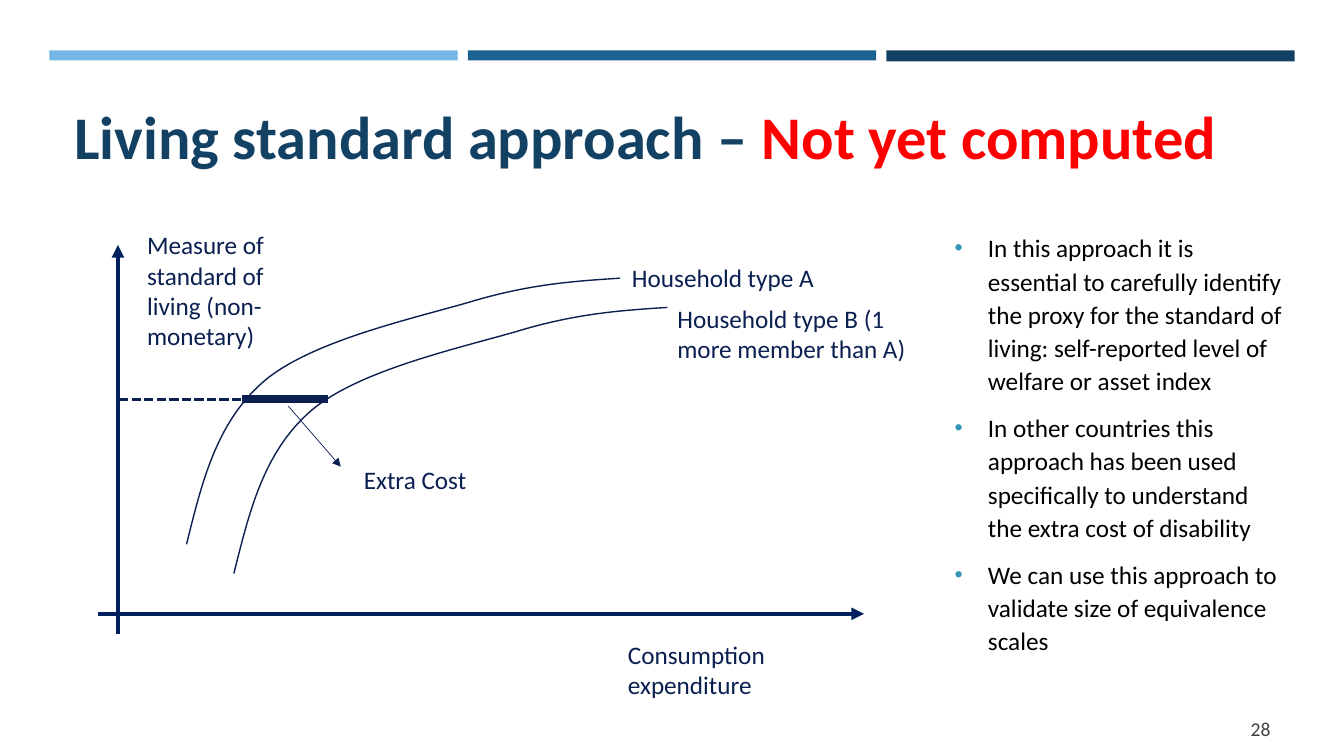
from dataclasses import dataclass
from typing import NamedTuple, Optional

from lxml.etree import SubElement
from pptx import Presentation
from pptx.dml.color import RGBColor
from pptx.enum.dml import MSO_LINE
from pptx.enum.shapes import MSO_CONNECTOR, MSO_SHAPE
from pptx.enum.text import MSO_ANCHOR, PP_ALIGN
from pptx.oxml.ns import qn
from pptx.util import Emu, Pt

PX = 9144


@dataclass(frozen=True)
class Theme:
    """Colours, font and type sizes of the slide."""
    font: str = "Calibri"
    sky: str = "75B6E5"
    blue: str = "1D6294"
    navy: str = "134163"
    axis: str = "002060"
    ink: str = "0B1F51"
    alert: str = "FF0000"
    bullet: str = "3494BA"
    body: str = "000000"
    grey: str = "404040"
    title_size: float = 43.2
    text_size: float = 18
    number_size: float = 14


THEME = Theme()


class Point(NamedTuple):
    """A place on the slide in px."""
    x: int
    y: int


class Frame(NamedTuple):
    """A rectangle in px."""
    left: int
    top: int
    width: int
    height: int


class Span(NamedTuple):
    """A piece of text in one colour."""
    text: str
    color: str


class Label(NamedTuple):
    """A diagram caption and its frame."""
    text: str
    frame: Frame


class Stroke(NamedTuple):
    """A straight line of the diagram."""
    start: Point
    end: Point
    color: str
    weight: float
    dash: Optional[MSO_LINE] = None
    arrow: bool = False


BARS = ((THEME.sky, 10), (THEME.blue, 10), (THEME.navy, 11))
TITLE = (Span("Living standard approach – ", THEME.navy),
         Span("Not yet computed", THEME.alert))
BULLETS = (
    "In this approach it is essential to carefully identify the proxy for the "
    "standard of living: self-reported level of welfare or asset index",
    "In other countries this approach has been used specifically to understand "
    "the extra cost of disability",
    "We can use this approach to validate size of equivalence scales",
)
LABELS = (
    Label("Measure of standard of living (non-monetary)", Frame(136, 223, 169, 131)),
    Label("Consumption expenditure", Frame(613, 629, 260, 71)),
    Label("Household type B (1 more member than A)", Frame(662, 296, 264, 71)),
    Label("Household type A", Frame(617, 255, 273, 40)),
    Label("Extra Cost", Frame(351, 456, 208, 40)),
)
STROKES = (
    Stroke(Point(117, 629), Point(117, 243), THEME.axis, 3, arrow=True),
    Stroke(Point(97, 609), Point(857, 609), THEME.axis, 3, arrow=True),
    Stroke(Point(118, 396), Point(325, 396), THEME.ink, 2.25, dash=MSO_LINE.SQUARE_DOT),
    Stroke(Point(240, 396), Point(325, 396), THEME.ink, 6),
    Stroke(Point(286, 403), Point(338, 463), THEME.ink, 0.5, arrow=True),
)
HOUSEHOLD_A = tuple(Point(*pair) for pair in (
    (185, 540), (200, 480), (214, 420), (261, 379), (307, 339), (406, 317),
    (465, 300), (524, 282), (569, 279), (615, 276)))
HOUSEHOLD_B = tuple(Point(point.x + 47, point.y + 29) for point in HOUSEHOLD_A)


def rgb(color: str) -> RGBColor:
    """Turn a hex string into a colour."""
    return RGBColor.from_string(color)


def emu(lengths) -> list[Emu]:
    """Turn px lengths into EMU."""
    return [Emu(length * PX) for length in lengths]


def add_bar(page, frame: Frame, color: str) -> None:
    """Draw a plain filled rectangle."""
    bar = page.shapes.add_shape(MSO_SHAPE.RECTANGLE, *emu(frame))
    bar.shadow.inherit = False
    bar.fill.solid()
    bar.fill.fore_color.rgb = rgb(color)
    bar.line.fill.background()


def set_bullet(para) -> None:
    """Give a paragraph a coloured hanging bullet and its spacing."""
    para.line_spacing = 1.1
    para.space_before = Pt(3.6)
    para.space_after = Pt(6)
    properties = para._p.get_or_add_pPr()
    properties.set("marL", str(33 * PX))
    properties.set("indent", str(-33 * PX))
    tint = SubElement(properties, qn("a:buClr"))
    SubElement(tint, qn("a:srgbClr"), val=THEME.bullet)
    SubElement(properties, qn("a:buSzPct"), val="92000")
    SubElement(properties, qn("a:buFont"), typeface="Arial")
    SubElement(properties, qn("a:buChar"), char="•")


def add_text(page, frame: Frame, paras, *, size: float = THEME.text_size,
             bold: bool = False, align=PP_ALIGN.LEFT, anchor=MSO_ANCHOR.TOP,
             bullets: bool = False) -> None:
    """Write paragraphs, each a sequence of spans, in a wrapping text box."""
    box = page.shapes.add_textbox(*emu(frame)).text_frame
    box.word_wrap = True
    box.vertical_anchor = anchor
    for index, spans in enumerate(paras):
        para = box.add_paragraph() if index else box.paragraphs[0]
        para.alignment = align
        if bullets:
            set_bullet(para)
        for span in spans:
            run = para.add_run()
            run.text = span.text
            run.font.name = THEME.font
            run.font.size = Pt(size)
            run.font.bold = bold
            run.font.color.rgb = rgb(span.color)


def add_stroke(page, stroke: Stroke) -> None:
    """Draw a straight line, dashed or with an arrowhead if asked."""
    line = page.shapes.add_connector(
        MSO_CONNECTOR.STRAIGHT, *emu(stroke.start + stroke.end))
    line.line.color.rgb = rgb(stroke.color)
    line.line.width = Pt(stroke.weight)
    if stroke.dash:
        line.line.dash_style = stroke.dash
    if stroke.arrow:
        SubElement(line.get_or_add_ln(), qn("a:tailEnd"), type="triangle")
    SubElement(line._element.spPr, qn("a:effectLst"))


def add_curve(page, knots: tuple[Point, ...]) -> None:
    """Draw an open curve whose knots chain cubic segments."""
    builder = page.shapes.build_freeform(*knots[0], scale=PX)
    builder.add_line_segments(knots[1:], close=False)
    curve = builder.convert_to_shape()
    outline = next(curve._element.iter(qn("a:lnTo"))).getparent()
    sides = outline.findall(qn("a:lnTo"))
    for first in range(0, len(sides), 3):
        cubic = SubElement(outline, qn("a:cubicBezTo"))
        for side in sides[first:first + 3]:
            cubic.append(side[0])
            outline.remove(side)
    curve.shadow.inherit = False
    curve.fill.background()
    curve.line.color.rgb = rgb(THEME.ink)
    curve.line.width = Pt(1)


def main() -> None:
    """Build the slide and save it."""
    deck = Presentation()
    deck.slide_width, deck.slide_height = emu((1333, 750))
    page = deck.slides.add_slide(deck.slide_layouts[6])
    for index, (color, height) in enumerate(BARS):
        add_bar(page, Frame(49 + 415 * index, 50, 405, height), color)
    add_text(page, Frame(64, 80, 1206, 108), [TITLE], size=THEME.title_size,
             bold=True, anchor=MSO_ANCHOR.MIDDLE)
    add_text(page, Frame(937, 223, 348, 463),
             [[Span(text, THEME.body)] for text in BULLETS], bullets=True)
    for knots in (HOUSEHOLD_A, HOUSEHOLD_B):
        add_curve(page, knots)
    for stroke in STROKES:
        add_stroke(page, stroke)
    for label in LABELS:
        add_text(page, label.frame, [[Span(label.text, THEME.ink)]])
    add_text(page, Frame(1155, 703, 115, 40), [[Span("28", THEME.grey)]],
             size=THEME.number_size, align=PP_ALIGN.RIGHT, anchor=MSO_ANCHOR.MIDDLE)
    deck.save("out.pptx")


if __name__ == "__main__":
    main()
